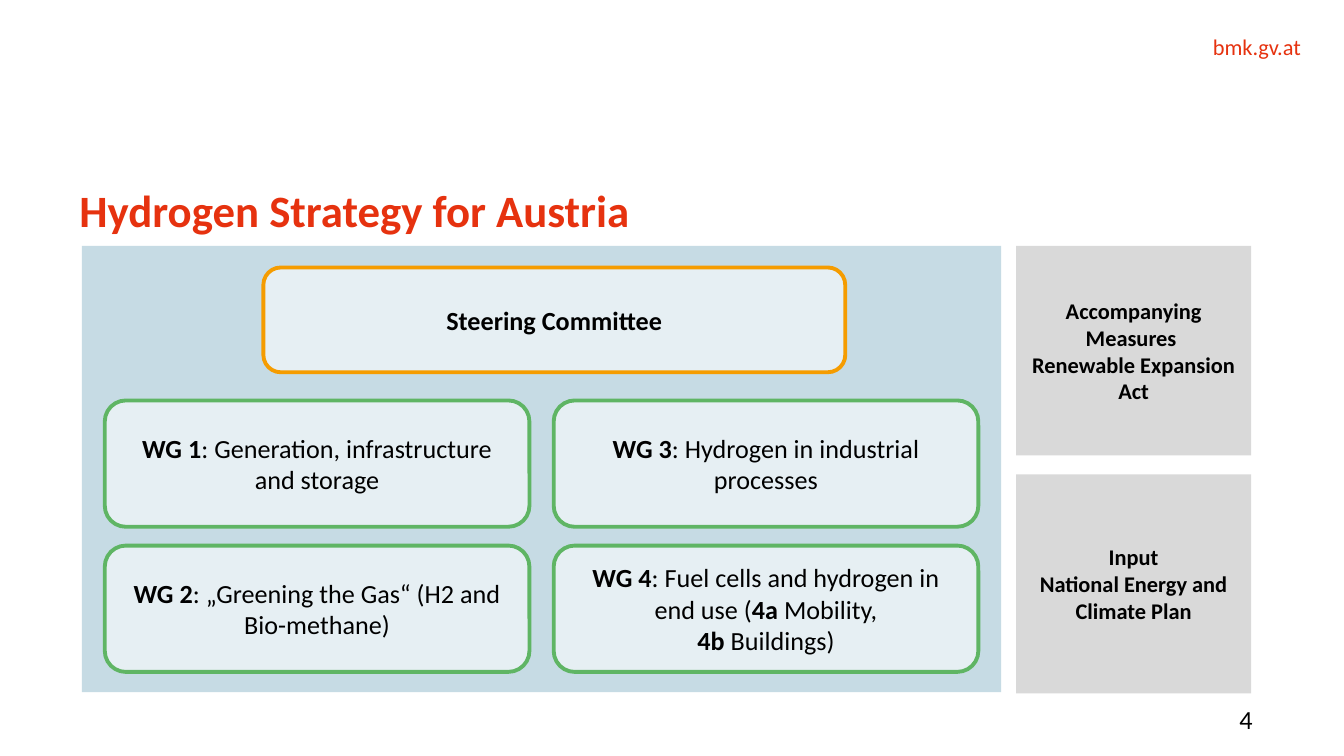
import pptx
import pptx.dml.color
import pptx.enum.shapes
import pptx.enum.text
import pptx.util

Inches = pptx.util.Inches
Align = pptx.enum.text.PP_ALIGN
Anchor = pptx.enum.text.MSO_ANCHOR
Shape = pptx.enum.shapes.MSO_SHAPE

FONT = "Calibri"
RED, BLACK, GREY = "E6320F", "000000", "D9D9D9"
PANEL, CARD, ORANGE, GREEN = "C6DBE4", "E6EFF3", "F59C00", "5FB564"

# Text is a list of paragraphs, each a list of (words, bold) runs.
TITLE = [[("Hydrogen Strategy for Austria", True)]]
SITE = [[("bmk.gv.at", False)]]
PAGE_NUMBER = [[("4", False)]]
COMMITTEE = [[("Steering Committee", True)]]
WORKING_GROUPS = [  # rows of the grid
    [
        [[("WG 1", True), (": Generation, infrastructure and storage", False)]],
        [[("WG 3", True), (": Hydrogen in industrial processes", False)]],
    ],
    [
        [[("WG 2", True), (": „Greening the Gas“ (H2 and Bio-methane)", False)]],
        [[("WG 4", True), (": Fuel cells and hydrogen in end use (", False),
          ("4a ", True), ("Mobility,\n", False),
          ("4b", True), (" Buildings)", False)]],
    ],
]
SIDE_BOXES = [  # top, height, text
    (1.83, 1.56, [[("Accompanying Measures ", True)],
                  [("Renewable Expansion Act", True)]]),
    (3.53, 1.63, [[("Input", True)],
                  [("National Energy and Climate Plan", True)]]),
]

SLIDE_WIDTH = 10
SLIDE_HEIGHT = SLIDE_WIDTH * 9 / 16
GRID_LEFT, GRID_TOP = 0.78, 2.98
CARD_WIDTH, CARD_HEIGHT = 3.16, 0.94
COLUMN_GAP, ROW_GAP = 0.18, 0.14


def color(value):
    return pptx.dml.color.RGBColor.from_string(value)


def write(frame, paragraphs, size, ink=BLACK, align=Align.CENTER, anchor=Anchor.MIDDLE):
    frame.word_wrap = True
    frame.vertical_anchor = anchor
    for index, runs in enumerate(paragraphs):
        para = frame.add_paragraph() if index else frame.paragraphs[0]
        para.alignment = align
        for words, bold in runs:
            span = para.add_run()
            span.text = words.rstrip("\n")
            span.font.name = FONT
            span.font.size = pptx.util.Pt(size)
            span.font.bold = bold
            span.font.color.rgb = color(ink)
            if words.endswith("\n"):
                para.add_line_break()


def remove_insets(frame):
    frame.margin_left = frame.margin_right = 0
    frame.margin_top = frame.margin_bottom = 0


def add_label(slide, place, paragraphs, size, ink, anchor):
    box = slide.shapes.add_textbox(*map(Inches, place))
    remove_insets(box.text_frame)
    write(box.text_frame, paragraphs, size, ink, Align.RIGHT, anchor)


def add_box(slide, kind, place, fill, line=None, paragraphs=(), size=14):
    box = slide.shapes.add_shape(kind, *map(Inches, place))
    box.shadow.inherit = False
    box.fill.solid()
    box.fill.fore_color.rgb = color(fill)
    if line:
        box.line.color.rgb = color(line)
        box.line.width = pptx.util.Pt(2.08)
    else:
        box.line.fill.background()
    write(box.text_frame, paragraphs, size)


def add_title(slide):
    title = slide.shapes.title
    title.left, title.top, title.width, title.height = map(Inches, (0.59, 1.34, 8.73, 0.68))
    frame = title.text_frame
    remove_insets(frame)
    frame.auto_size = pptx.enum.text.MSO_AUTO_SIZE.NONE
    write(frame, TITLE, 24, RED, Align.LEFT, Anchor.TOP)
    frame.paragraphs[0].line_spacing = pptx.util.Pt(30)


def main():
    deck = pptx.Presentation()
    deck.slide_width, deck.slide_height = Inches(SLIDE_WIDTH), Inches(SLIDE_HEIGHT)
    slide = deck.slides.add_slide(deck.slide_layouts[5])

    add_label(slide, (7.27, 0.25, 2.41, 0.2), SITE, 12, RED, Anchor.TOP)
    add_title(slide)
    add_label(slide, (8.43, 5.24, 0.89, 0.22), PAGE_NUMBER, 14, BLACK, Anchor.MIDDLE)

    add_box(slide, Shape.RECTANGLE, (0.61, 1.83, 6.84, 3.32), PANEL)
    add_box(slide, Shape.ROUNDED_RECTANGLE, (1.96, 1.99, 4.33, 0.78), CARD, ORANGE, COMMITTEE)
    for row, groups in enumerate(WORKING_GROUPS):
        for column, group in enumerate(groups):
            left = GRID_LEFT + column * (CARD_WIDTH + COLUMN_GAP)
            top = GRID_TOP + row * (CARD_HEIGHT + ROW_GAP)
            add_box(slide, Shape.ROUNDED_RECTANGLE, (left, top, CARD_WIDTH, CARD_HEIGHT),
                    CARD, GREEN, group)
    for top, height, text in SIDE_BOXES:
        add_box(slide, Shape.RECTANGLE, (7.56, top, 1.75, height), GREY, None, text, 12)

    deck.save("out.pptx")


if __name__ == "__main__":
    main()
